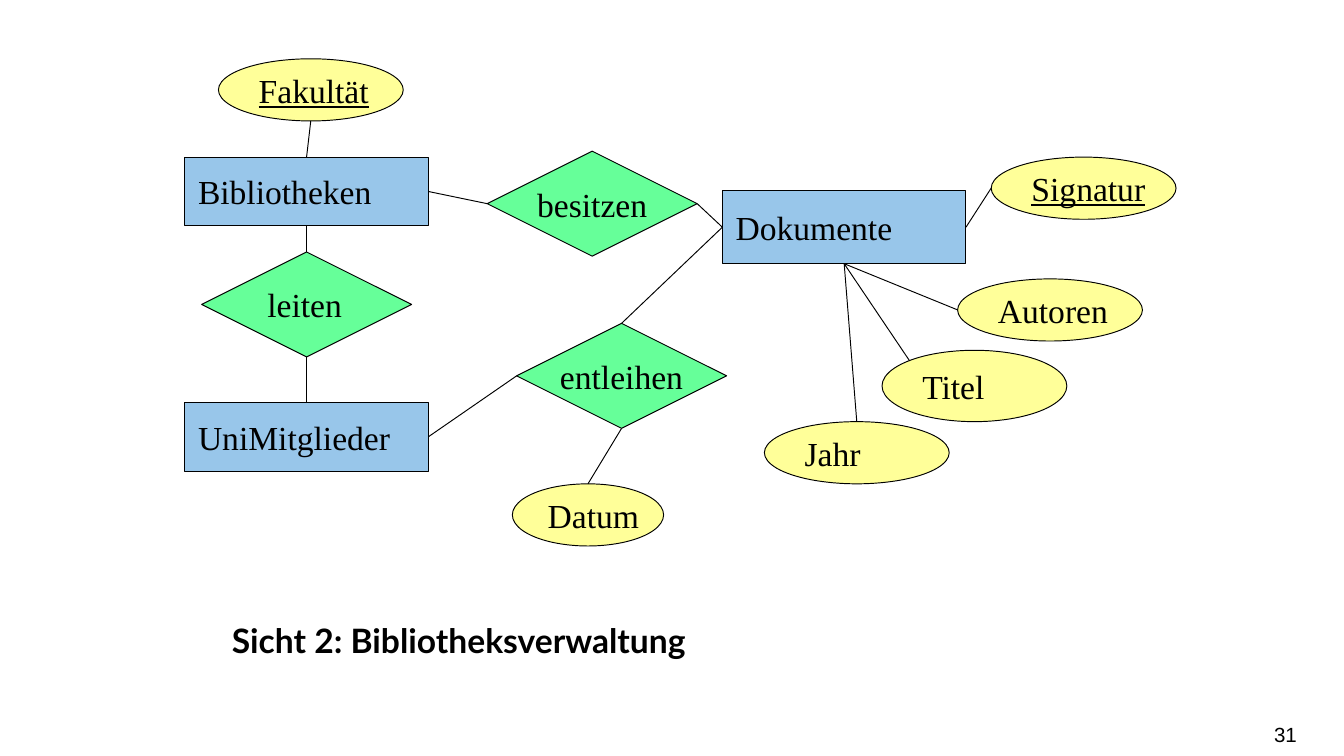
import pptx
import pptx.util
import pptx.dml.color
import pptx.enum.shapes
import pptx.enum.text
import pptx.oxml.ns
import lxml.etree

COLUMNS, ROWS = 160, 90
SLIDE_WIDTH, SLIDE_HEIGHT = pptx.util.Inches(10), pptx.util.Inches(5.625)
SERIF = "Times New Roman"
BLACK = "000000"
SHAPE = pptx.enum.shapes.MSO_SHAPE
ALIGN = pptx.enum.text.PP_ALIGN
ANCHOR = pptx.enum.text.MSO_ANCHOR

VIEW_TITLE = "Sicht 2: Bibliotheksverwaltung"
PAGE_NUMBER = "31"

KINDS = {
    "entity": (SHAPE.RECTANGLE, "98C6EA", 29),
    "relation": (SHAPE.DIAMOND, "66FF99", 25),
    "attribute": (SHAPE.OVAL, "FFFF99", 22),
}

NODES = [
    ("Signatur", "attribute", 118, 18.7, 7.4),
    ("Bibliotheken", "entity", 22, 18.7, 8.2),
    ("UniMitglieder", "entity", 22, 47.9, 8.2),
    ("besitzen", "relation", 58, 18, 12.5),
    ("Dokumente", "entity", 86, 22.7, 8.7),
    ("Autoren", "attribute", 114, 33.2, 7.4),
    ("Titel", "attribute", 105, 41.7, 8.5),
    ("Jahr", "attribute", 91, 50.2, 7.4),
    ("entleihen", "relation", 61.5, 38.5, 12.5),
    ("leiten", "relation", 24, 30, 12.5),
    ("Datum", "attribute", 61, 57.6, 7.4),
    ("Fakultät", "attribute", 26, 7, 7.4),
]
KEYS = {"Signatur", "Fakultät"}
CENTERED = {"besitzen", "entleihen"}
NARROW = {"Datum": 18}

LINKS = [
    ("Fakultät", "bottom", "Bibliotheken", "top"),
    ("Bibliotheken", "bottom", "leiten", "top"),
    ("leiten", "bottom", "UniMitglieder", "top"),
    ("Bibliotheken", "right", "besitzen", "left"),
    ("besitzen", "right", "Dokumente", "left"),
    ("UniMitglieder", "right", "entleihen", "left"),
    ("entleihen", "top", "Dokumente", "left"),
    ("entleihen", "bottom", "Datum", "top"),
    ("Dokumente", "right", "Signatur", "left"),
    ("Dokumente", "bottom", "Autoren", "left"),
    ("Dokumente", "bottom", "Titel", "top left"),
    ("Dokumente", "bottom", "Jahr", "top"),
]
SITES = {"top": 0, "left": 1, "bottom": 2, "right": 3}
SIDE_SHARES = {
    "top": (0.5, 0),
    "left": (0, 0.5),
    "bottom": (0.5, 1),
    "right": (1, 0.5),
    "top left": (0.15, 0.15),
}


def color(value):
    return pptx.dml.color.RGBColor.from_string(value)


def grid(left, top, width, height):
    column, row = SLIDE_WIDTH / COLUMNS, SLIDE_HEIGHT / ROWS
    return [round(n * unit) for n, unit in
            ((left, column), (top, row), (width, column), (height, row))]


def write(holder, text, font=SERIF, size=18, bold=False, underline=False,
          align=ALIGN.LEFT, anchor=ANCHOR.MIDDLE, wrap=False):
    frame = holder.text_frame
    frame.auto_size = pptx.enum.text.MSO_AUTO_SIZE.NONE
    frame.word_wrap = wrap
    frame.vertical_anchor = anchor
    paragraph = frame.paragraphs[0]
    paragraph.alignment = align
    run = paragraph.add_run()
    run.text = text
    run.font.name = font
    run.font.size = pptx.util.Pt(size)
    run.font.bold = bold
    run.font.underline = underline
    run.font.color.rgb = color(BLACK)


def outline(part):
    part.line.color.rgb = color(BLACK)
    part.line.width = pptx.util.Pt(0.5)


def add_node(slide, label, kind, left, top, height):
    preset, fill, width = KINDS[kind]
    node = slide.shapes.add_shape(
        preset, *grid(left, top, NARROW.get(label, width), height))
    node.shadow.inherit = False
    node.fill.solid()
    node.fill.fore_color.rgb = color(fill)
    outline(node)
    write(node, label, underline=label in KEYS,
          align=ALIGN.CENTER if label in CENTERED else ALIGN.LEFT)
    return node


def side_point(node, side):
    across, down = SIDE_SHARES[side]
    return (round(node.left + across * node.width),
            round(node.top + down * node.height))


def add_link(slide, start, start_side, end, end_side):
    link = slide.shapes.add_connector(
        pptx.enum.shapes.MSO_CONNECTOR.STRAIGHT,
        *side_point(start, start_side), *side_point(end, end_side))
    outline(link)
    lxml.etree.SubElement(link._element.spPr, pptx.oxml.ns.qn("a:effectLst"))
    for node, side, connect in ((start, start_side, link.begin_connect),
                                (end, end_side, link.end_connect)):
        if node.auto_shape_type != SHAPE.OVAL:
            connect(node, SITES[side])


def main():
    deck = pptx.Presentation()
    deck.slide_width, deck.slide_height = SLIDE_WIDTH, SLIDE_HEIGHT
    slide = deck.slides.add_slide(deck.slide_layouts[5])

    heading = slide.shapes.title
    heading.left, heading.top, heading.width, heading.height = grid(26, 73, 110, 6.4)
    write(heading, VIEW_TITLE, font="Lato", bold=True, anchor=ANCHOR.TOP, wrap=True)

    page = slide.shapes.add_textbox(*grid(118.6, 85, 35.8, 4.8))
    page.text_frame.margin_left = page.text_frame.margin_right = 0
    write(page, PAGE_NUMBER, font="Arial", size=11, align=ALIGN.RIGHT, wrap=True)

    nodes = {node[0]: add_node(slide, *node) for node in NODES}
    for start, start_side, end, end_side in LINKS:
        add_link(slide, nodes[start], start_side, nodes[end], end_side)

    deck.save("out.pptx")


if __name__ == "__main__":
    main()
